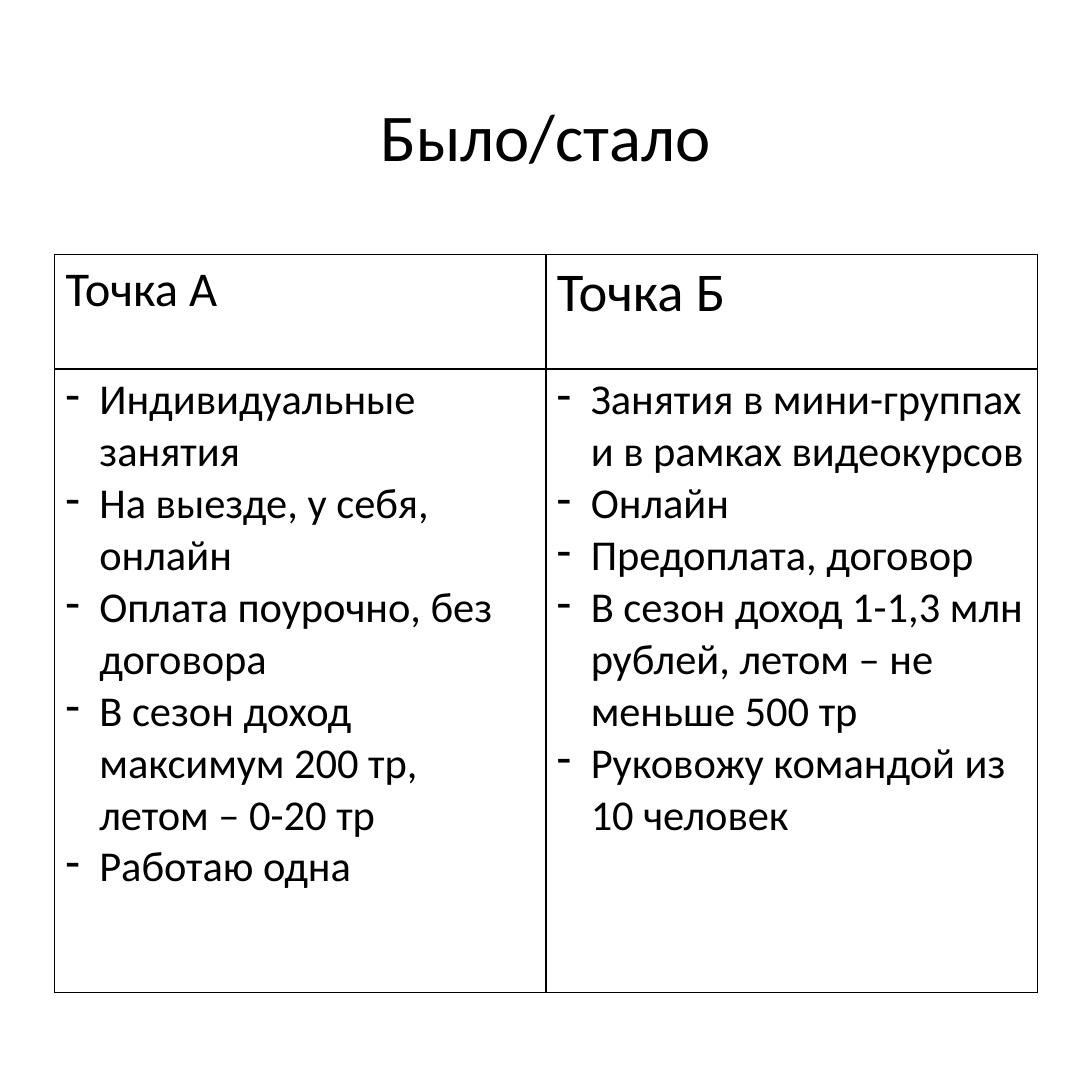
from lxml.etree import SubElement
from pptx import Presentation
from pptx.dml.color import RGBColor
from pptx.enum.text import MSO_ANCHOR as Anchor, PP_ALIGN as Align
from pptx.oxml.ns import qn
from pptx.util import Inches, Pt

BLACK = RGBColor(0, 0, 0)
WHITE = RGBColor(255, 255, 255)

HEADINGS = [("Точка А", 32), ("Точка Б", 36)]
POINTS = [
    [
        "Индивидуальные занятия",
        "На выезде, у себя, онлайн",
        "Оплата поурочно, без договора",
        "В сезон доход максимум 200 тр, летом – 0-20 тр",
        "Работаю одна",
    ],
    [
        "Занятия в мини-группах и в рамках видеокурсов",
        "Онлайн",
        "Предоплата, договор",
        "В сезон доход 1-1,3 млн рублей, летом – не меньше 500 тр",
        "Руковожу командой из 10 человек",
    ],
]


class ComparisonPage:
    font_name = "Calibri"
    color = BLACK
    bullet_indent = Inches(0.31)
    border_width = Pt(1)

    def __init__(self, deck):
        self.page = deck.slides.add_slide(deck.slide_layouts[6])
        self.page.background.fill.solid()
        self.page.background.fill.fore_color.rgb = WHITE

    def add_span(self, para, text, size):
        span = para.add_run()
        span.text = text
        span.font.name = self.font_name
        span.font.size = Pt(size)
        span.font.color.rgb = self.color

    def title(self, text, left, top, width, height):
        box = self.page.shapes.add_textbox(
            Inches(left), Inches(top), Inches(width), Inches(height))
        frame = box.text_frame
        frame.word_wrap = True
        frame.vertical_anchor = Anchor.MIDDLE
        para = frame.paragraphs[0]
        para.alignment = Align.CENTER
        self.add_span(para, text, 44)

    def table(self, left, top, column_widths, row_heights):
        table = self.page.shapes.add_table(
            len(row_heights), len(column_widths), Inches(left), Inches(top),
            Inches(sum(column_widths)), Inches(sum(row_heights))).table
        table.first_row = False
        table.horz_banding = False
        for column, width in zip(table.columns, column_widths):
            column.width = Inches(width)
        for row, height in zip(table.rows, row_heights):
            row.height = Inches(height)
        for cell in table.iter_cells():
            self.outline(cell)
            cell.fill.background()
        return table

    def outline(self, cell):
        properties = cell._tc.get_or_add_tcPr()
        for side in ("a:lnL", "a:lnR", "a:lnT", "a:lnB"):
            line = SubElement(properties, qn(side), w=str(self.border_width))
            fill = SubElement(line, qn("a:solidFill"))
            SubElement(fill, qn("a:srgbClr"), val=str(self.color))

    def bullets(self, cell, points, size):
        frame = cell.text_frame
        for index, point in enumerate(points):
            para = frame.add_paragraph() if index else frame.paragraphs[0]
            properties = para._p.get_or_add_pPr()
            properties.set("marL", str(self.bullet_indent))
            properties.set("indent", str(-self.bullet_indent))
            SubElement(properties, qn("a:buFontTx"))
            SubElement(properties, qn("a:buChar"), char="-")
            self.add_span(para, point, size)


def main():
    deck = Presentation()
    deck.slide_width = deck.slide_height = Inches(10)
    page = ComparisonPage(deck)
    page.title("Было/стало", 0.5, 0.4, 9, 1.67)
    table = page.table(0.5, 2.33, [4.5, 4.5], [1.05, 5.71])
    for column, ((heading, size), points) in enumerate(zip(HEADINGS, POINTS)):
        page.add_span(table.cell(0, column).text_frame.paragraphs[0], heading, size)
        page.bullets(table.cell(1, column), points, 28)
    deck.save("out.pptx")


if __name__ == "__main__":
    main()
